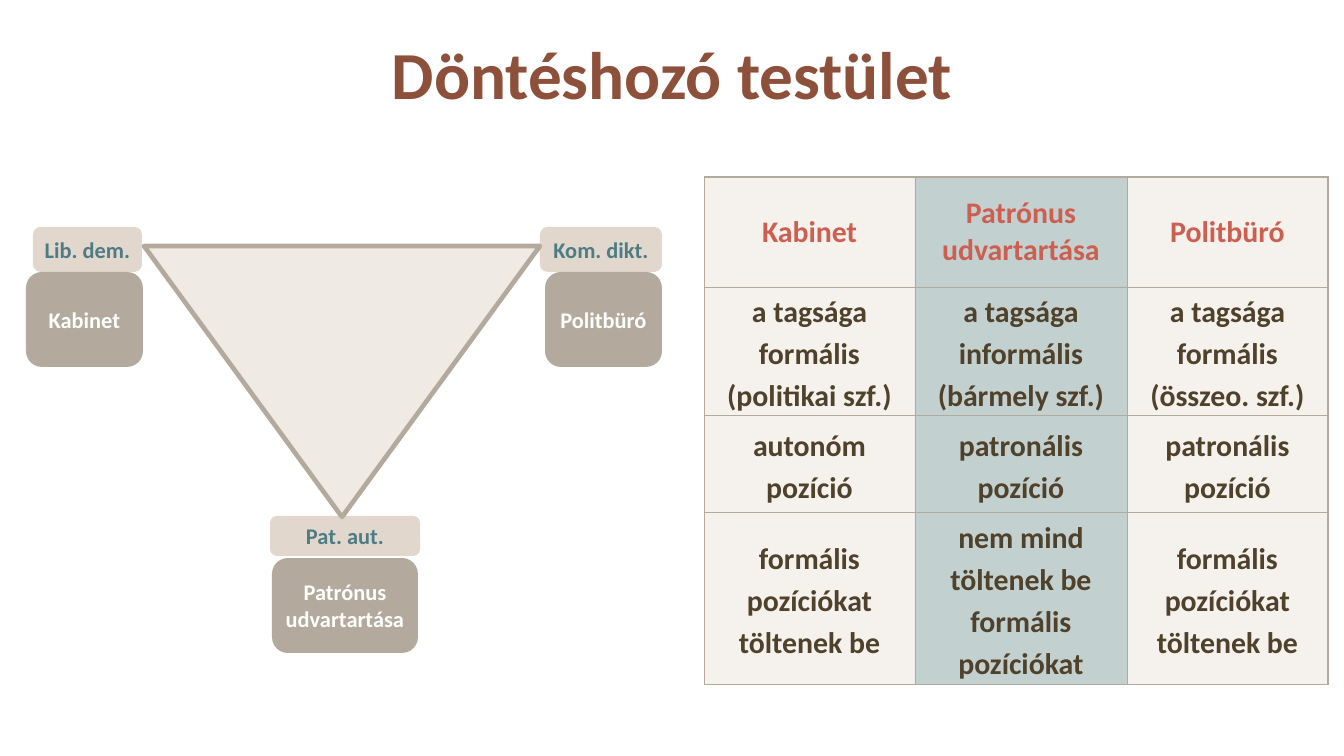
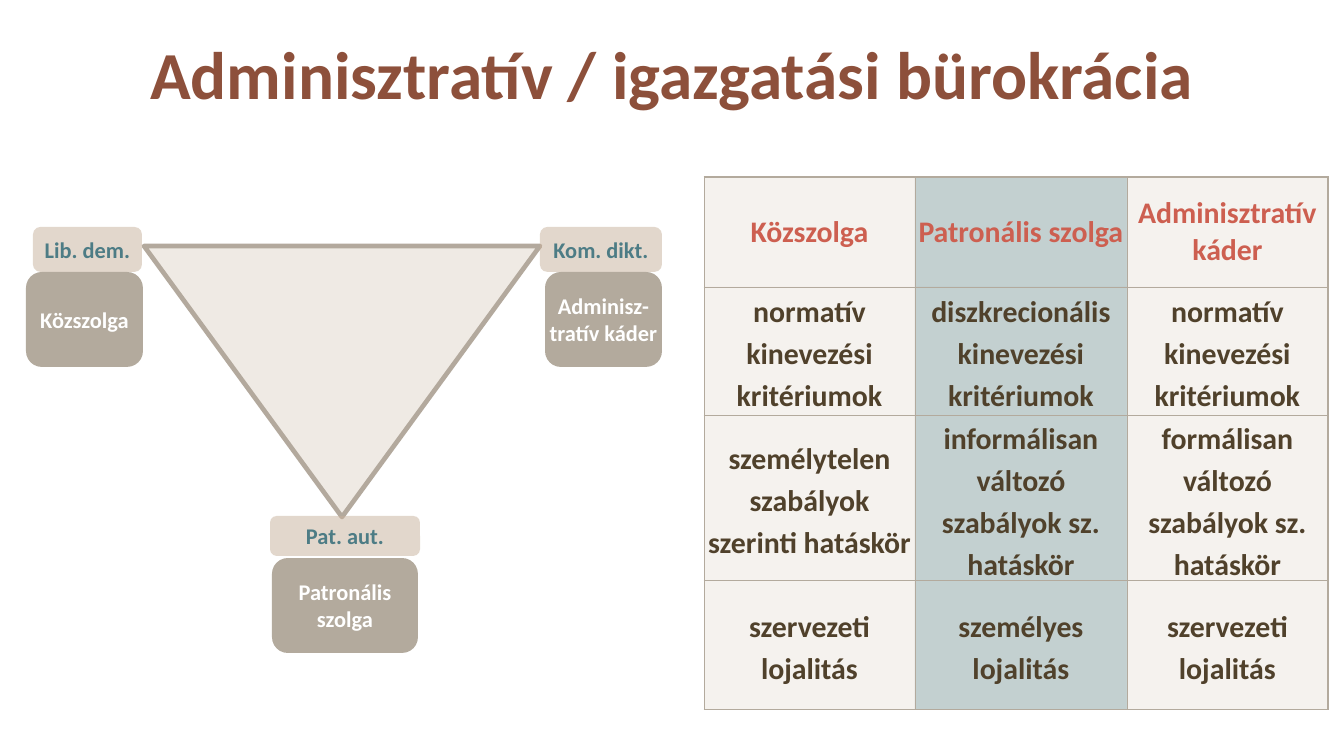
from lxml.etree import SubElement
from pptx import Presentation
from pptx.dml.color import RGBColor
from pptx.enum.shapes import MSO_SHAPE as Shape
from pptx.enum.text import MSO_ANCHOR as Anchor, PP_ALIGN as Align
from pptx.oxml import parse_xml
from pptx.oxml.ns import nsdecls, qn
from pptx.util import Pt

# Content
SLIDES = [
    {
        "title": "Döntéshozó testület",
        "corners": ["Kabinet", "Patrónus udvartartása", "Politbüró"],
        "heights": [110, 129, 97, 172],
        "rows": [
            ("Kabinet", "Patrónus udvartartása", "Politbüró"),
            ("a tagsága formális (politikai szf.)",
             "a tagsága informális (bármely szf.)",
             "a tagsága formális (összeo. szf.)"),
            ("autonóm\npozíció", "patronális pozíció", "patronális pozíció"),
            ("formális pozíciókat töltenek be",
             "nem mind töltenek be formális pozíciókat",
             "formális pozíciókat töltenek be"),
        ],
    },
    {
        "title": "Adminisztratív / igazgatási bürokrácia",
        "corners": ["Közszolga", "Patronális szolga", "Adminisz-tratív káder"],
        "heights": [110, 129, 129, 129],
        "rows": [
            ("Közszolga", "Patronális szolga", "Adminisztratív káder"),
            ("normatív kinevezési kritériumok",
             "diszkrecionális kinevezési kritériumok",
             "normatív kinevezési kritériumok"),
            ("személytelen szabályok szerinti hatáskör",
             "informálisan változó szabályok sz. hatáskör",
             "formálisan változó szabályok sz. hatáskör"),
            ("szervezeti lojalitás", "személyes lojalitás", "szervezeti lojalitás"),
        ],
    },
]

# Regime label, its place, and the place of the box below it
CORNERS = [
    ("Lib. dem.", (33, 227, 109, 45), (26, 272, 117, 95)),
    ("Pat. aut.", (270, 516, 150, 40), (272, 558, 146, 95)),
    ("Kom. dikt.", (540, 227, 122, 45), (545, 272, 117, 95)),
]

# Shared look
COLORS = {
    "title": "8D503B", "triangle": "EFEAE4", "edge": "B3A99D",
    "label": "C7B09A", "label_text": "4D7C85", "box": "B3AA9D",
    "white": "FFFFFF", "header": "CD5F50", "body": "50412B",
    "column": "EFEAE4", "middle": "9CB1B1", "border": "B3AA9D",
}
FORMATS = {
    "title": {"size": Pt(36), "color": "title"},
    "label": {"size": Pt(12), "color": "label_text"},
    "box": {"size": Pt(12), "color": "white"},
    "header": {"size": Pt(16), "color": "header"},
    "body": {"size": Pt(16), "color": "body"},
}
TITLE = (16, 0, 1312, 145)
TRIANGLE = (144, 246, 396, 271)
TABLE_LEFT, TABLE_TOP = 704, 177
COLUMNS = [211, 212, 201]


def px(length):
    return round(length * 914400 / 134.4)


def place(area):
    return [px(length) for length in area]


def fill_with(part, color, opacity=100):
    part.fill.solid()
    part.fill.fore_color.rgb = RGBColor.from_string(COLORS[color])
    if opacity < 100:
        tint = next(part.fill._xPr.iter(qn("a:srgbClr")))
        SubElement(tint, qn("a:alpha"), val=str(opacity * 1000))


def write(frame, text, style, spacing=1.0):
    para = frame.paragraphs[0]
    para.text = text
    para.alignment = Align.CENTER
    para.line_spacing = spacing
    look = {"name": "Calibri", "bold": True, "size": FORMATS[style]["size"]}
    for span in para.runs:
        for name, value in look.items():
            setattr(span.font, name, value)
        span.font.color.rgb = RGBColor.from_string(COLORS[FORMATS[style]["color"]])


def set_margins(part, margin):
    for side in ("left", "top", "right", "bottom"):
        setattr(part, f"margin_{side}", px(margin))


def add_title(page, text):
    box = page.shapes.add_textbox(*place(TITLE))
    box.text_frame.word_wrap = True
    box.text_frame.vertical_anchor = Anchor.MIDDLE
    write(box.text_frame, text, "title")


def add_block(page, area, text, style, margin=0, opacity=100):
    block = page.shapes.add_shape(Shape.ROUNDED_RECTANGLE, *place(area))
    block.shadow.inherit = False
    block.line.fill.background()
    fill_with(block, style, opacity)
    frame = block.text_frame
    frame.word_wrap = True
    frame.vertical_anchor = Anchor.MIDDLE
    set_margins(frame, margin)
    write(frame, text, style)


def add_triangle(page, names):
    triangle = page.shapes.add_shape(Shape.ISOSCELES_TRIANGLE, *place(TRIANGLE))
    triangle.rotation = 180
    triangle.shadow.inherit = False
    fill_with(triangle, "triangle")
    triangle.line.color.rgb = RGBColor.from_string(COLORS["edge"])
    triangle.line.width = Pt(2.5)
    for name, (label, label_area, box_area) in zip(names, CORNERS):
        add_block(page, label_area, label, "label", margin=7, opacity=50)
        add_block(page, box_area, name, "box")


def add_borders(cell, widths):
    props = cell._tc.get_or_add_tcPr()
    for index, (side, width) in enumerate(widths.items()):
        props.insert(index, parse_xml(
            f'<a:ln{side} {nsdecls("a")} w="{Pt(width)}"><a:solidFill>'
            f'<a:srgbClr val="{COLORS["border"]}"/></a:solidFill></a:ln{side}>'))


def add_table(page, rows, heights):
    area = (TABLE_LEFT, TABLE_TOP, sum(COLUMNS), sum(heights))
    table = page.shapes.add_table(len(rows), len(COLUMNS), *place(area)).table
    table.first_row = table.horz_banding = False
    for column, width in zip(table.columns, COLUMNS):
        column.width = px(width)
    for r, (texts, height) in enumerate(zip(rows, heights)):
        table.rows[r].height = px(height)
        for c, text in enumerate(texts):
            cell = table.cell(r, c)
            cell.vertical_anchor = Anchor.MIDDLE
            set_margins(cell, 0)
            fill_with(cell, "middle" if c == 1 else "column", 60)
            add_borders(cell, {"L": 0.5, "R": 1 if c == len(COLUMNS) - 1 else 0.5,
                               "T": 0.5 if r else 1, "B": 0.5})
            if r == 0:
                write(cell.text_frame, text, "header")
            else:
                write(cell.text_frame, text, "body", 1.15)


def main():
    deck = Presentation()
    deck.slide_width, deck.slide_height = px(1344), px(756)
    for content in SLIDES:
        page = deck.slides.add_slide(deck.slide_layouts[6])
        add_title(page, content["title"])
        add_triangle(page, content["corners"])
        add_table(page, content["rows"], content["heights"])
    deck.save("out.pptx")


if __name__ == "__main__":
    main()
